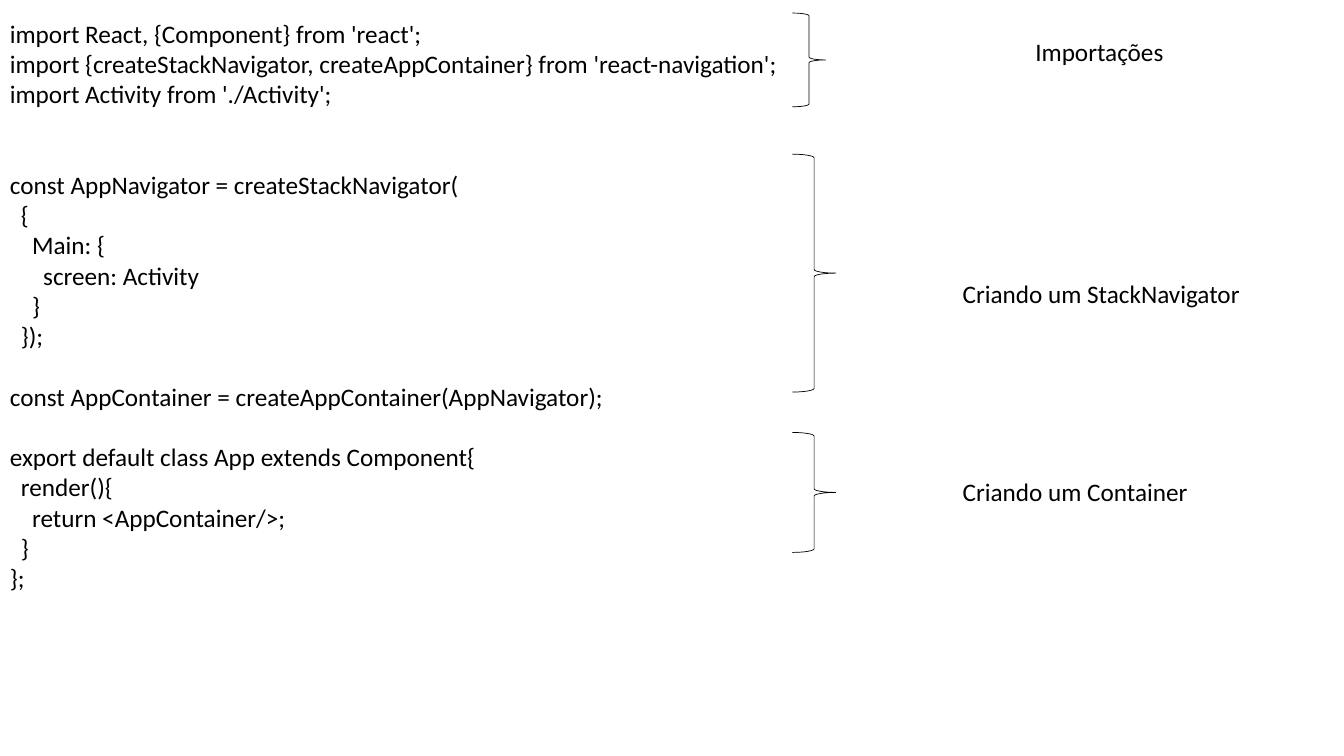
from dataclasses import dataclass

from pptx import Presentation
from pptx.dml.color import RGBColor
from pptx.enum.shapes import MSO_SHAPE as Shape
from pptx.enum.text import MSO_AUTO_SIZE as AutoSize, PP_ALIGN as Align
from pptx.slide import Slide
from pptx.util import Emu, Pt

EMU_PER_PX = 9144
FONT = "Calibri"
FONT_SIZE = 18
LINE_HEIGHT = 21.6
INDENT = 11
BLACK = "000000"
BRACE_LEFT = 786


@dataclass(frozen=True)
class Rect:
    left: int
    top: int
    width: int
    height: int


@dataclass(frozen=True)
class Line:
    text: str
    depth: int = 0
    gap: int = 0
    align: Align = Align.LEFT


@dataclass(frozen=True)
class Section:
    brace: Rect
    label_area: Rect
    label: Line


CODE_AREA = Rect(0, 13, 786, 586)
CODE = [
    Line("import React, {Component} from 'react';"),
    Line("import {createStackNavigator, createAppContainer} from 'react-navigation';"),
    Line("import Activity from './Activity';"),
    Line("const AppNavigator = createStackNavigator(", gap=2),
    Line("{", depth=1),
    Line("Main: {", depth=2),
    Line("screen: Activity", depth=3),
    Line("}", depth=2),
    Line("});", depth=1),
    Line("const AppContainer = createAppContainer(AppNavigator);", gap=1),
    Line("export default class App extends Component{", gap=1),
    Line("render(){", depth=1),
    Line("return <AppContainer/>;", depth=2),
    Line("}", depth=1),
    Line("};"),
]

SECTIONS = [
    Section(Rect(BRACE_LEFT, 13, 33, 93), Rect(1017, 31, 152, 40),
            Line("Importações")),
    Section(Rect(BRACE_LEFT, 153, 43, 236), Rect(945, 271, 296, 40),
            Line("Criando um StackNavigator", align=Align.JUSTIFY)),
    Section(Rect(BRACE_LEFT, 429, 43, 119), Rect(945, 468, 296, 40),
            Line("Criando um Container", align=Align.JUSTIFY)),
]


def px(length: int) -> Emu:
    return Emu(length * EMU_PER_PX)


def color(code: str) -> RGBColor:
    return RGBColor.from_string(code)


def place(area: Rect) -> tuple[Emu, Emu, Emu, Emu]:
    return px(area.left), px(area.top), px(area.width), px(area.height)


def add_text(page: Slide, area: Rect, lines: list[Line]) -> None:
    box = page.shapes.add_textbox(*place(area))
    frame = box.text_frame
    frame.word_wrap = True
    frame.auto_size = AutoSize.SHAPE_TO_FIT_TEXT
    for index, line in enumerate(lines):
        para = frame.add_paragraph() if index else frame.paragraphs[0]
        para.alignment = line.align
        para.space_before = Pt(line.gap * LINE_HEIGHT)
        properties = para._p.get_or_add_pPr()
        properties.set("marL", str(px(line.depth * INDENT)))
        properties.set("indent", "0")
        span = para.add_run()
        span.text = line.text
        span.font.name = FONT
        span.font.size = Pt(FONT_SIZE)
        span.font.color.rgb = color(BLACK)


def add_brace(page: Slide, area: Rect) -> None:
    brace = page.shapes.add_shape(Shape.RIGHT_BRACE, *place(area))
    brace.shadow.inherit = False
    brace.fill.background()
    brace.line.color.rgb = color(BLACK)
    brace.line.width = Pt(0.5)


def main() -> None:
    deck = Presentation()
    deck.slide_width, deck.slide_height = px(1333), px(750)
    page = deck.slides.add_slide(deck.slide_layouts[6])
    add_text(page, CODE_AREA, CODE)
    for section in SECTIONS:
        add_brace(page, section.brace)
        add_text(page, section.label_area, [section.label])
    deck.save("out.pptx")


if __name__ == "__main__":
    main()
